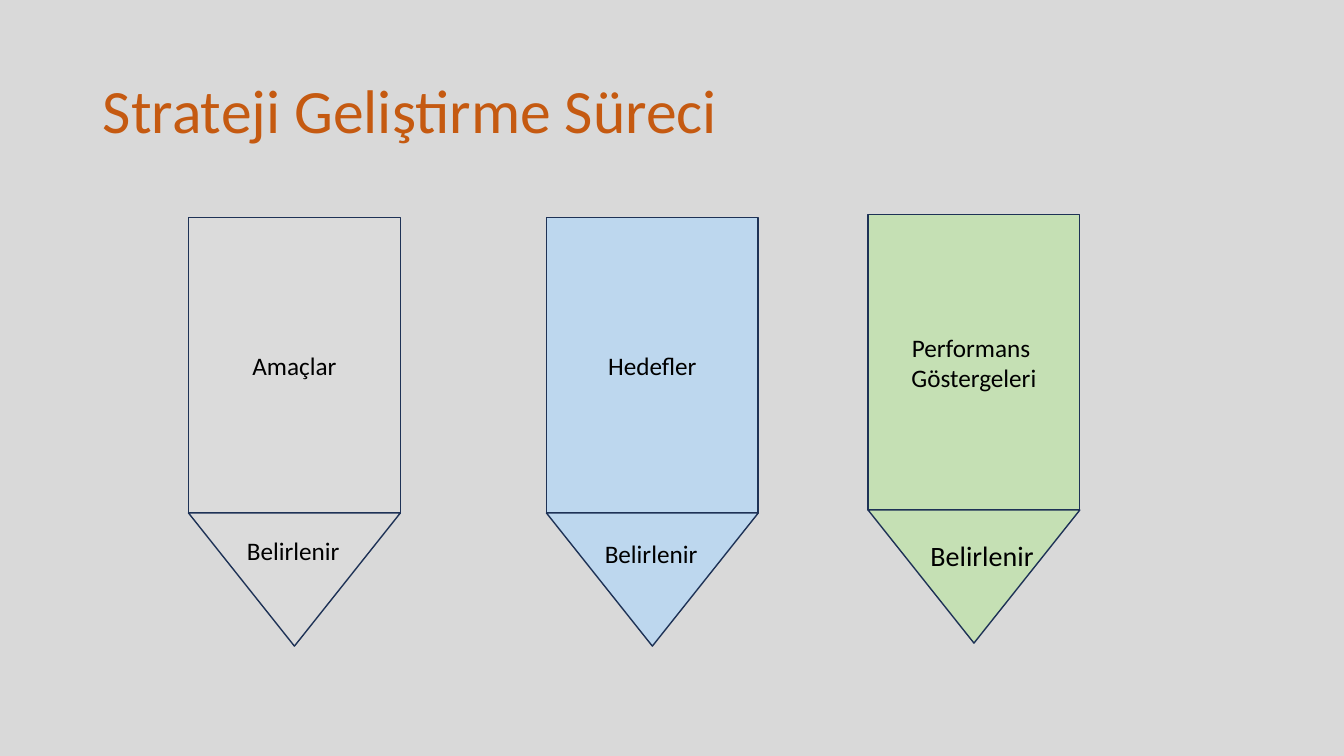
from dataclasses import dataclass

from pptx import Presentation
from pptx.dml.color import RGBColor
from pptx.enum.shapes import MSO_SHAPE
from pptx.enum.text import MSO_ANCHOR, MSO_AUTO_SIZE, PP_ALIGN
from pptx.util import Inches, Pt

RECT = MSO_SHAPE.RECTANGLE
TRIANGLE = MSO_SHAPE.ISOSCELES_TRIANGLE
MIDDLE, TOP = MSO_ANCHOR.MIDDLE, MSO_ANCHOR.TOP
LEFT, CENTER = PP_ALIGN.LEFT, PP_ALIGN.CENTER
NO_FIT, GROW = MSO_AUTO_SIZE.NONE, MSO_AUTO_SIZE.SHAPE_TO_FIT_TEXT


@dataclass(frozen=True)
class Theme:
    font: str = "Calibri"
    background: str = "D9D9D9"
    title: str = "C55A11"
    text: str = "000000"
    outline: str = "1E3256"
    gray: str = "DBDBDB"
    blue: str = "BDD7EE"
    green: str = "C5E0B4"
    title_size: int = 44
    body_size: int = 18
    large_size: int = 20
    line_width: int = 1


class SlideBuilder:
    """Draws styled elements on the current slide."""

    def __init__(self, prs, theme):
        self.theme = theme
        self.s = prs.slides.add_slide(prs.slide_layouts[5])
        fill = self.s.background.fill
        fill.solid()
        fill.fore_color.rgb = RGBColor.from_string(theme.background)

    def set_text(self, tf, text, size, color, align, anchor):
        tf.text = text
        tf.word_wrap = True
        tf.vertical_anchor = anchor
        for p in tf.paragraphs:
            p.alignment = align
            for r in p.runs:
                r.font.name = self.theme.font
                r.font.size = Pt(size)
                r.font.color.rgb = RGBColor.from_string(color)

    def title(self, text, x, y, w, h):
        sp = self.s.shapes.title
        sp.left, sp.top, sp.width, sp.height = map(Inches, (x, y, w, h))
        tf = sp.text_frame
        self.set_text(tf, text, self.theme.title_size, self.theme.title, LEFT, MIDDLE)
        tf.auto_size = NO_FIT
        tf.paragraphs[0].line_spacing = 0.9

    def shape(self, kind, x, y, w, h, color):
        sp = self.s.shapes.add_shape(kind, *map(Inches, (x, y, w, h)))
        sp.shadow.inherit = False
        sp.fill.solid()
        sp.fill.fore_color.rgb = RGBColor.from_string(color)
        sp.line.color.rgb = RGBColor.from_string(self.theme.outline)
        sp.line.width = Pt(self.theme.line_width)
        return sp

    def label(self, text, x, y, w, h, size):
        sp = self.s.shapes.add_textbox(*map(Inches, (x, y, w, h)))
        self.set_text(sp.text_frame, text, size, self.theme.text, LEFT, TOP)
        sp.text_frame.auto_size = GROW

    def pencil(self, text, x, y, color):
        width, body_height, tip_height = 2.1, 2.93, 1.32
        body = self.shape(RECT, x, y, width, body_height, color)
        self.set_text(body.text_frame, text, self.theme.body_size,
                      self.theme.text, CENTER, MIDDLE)
        tip = self.shape(TRIANGLE, x, y + body_height, width, tip_height, color)
        tip.rotation = 180


def main():
    prs = Presentation()
    prs.slide_width, prs.slide_height = Inches(13.33), Inches(7.5)
    theme = Theme()
    slide = SlideBuilder(prs, theme)
    slide.title("Strateji Geliştirme Süreci", 0.92, 0.4, 11.5, 1.45)

    small, large = theme.body_size, theme.large_size
    steps = [
        ("Amaçlar", 1.87, 2.16, theme.gray, (2.35, 5.26, 1.14, 0.4, small)),
        ("Hedefler", 5.42, 2.16, theme.blue, (5.9, 5.29, 1.14, 0.4, small)),
        ("Performans \nGöstergeleri", 8.61, 2.13, theme.green,
         (9.13, 5.29, 1.39, 0.44, large)),
    ]
    for text, x, y, color, label_box in steps:
        slide.pencil(text, x, y, color)
        slide.label("Belirlenir", *label_box)

    prs.save("out.pptx")


if __name__ == "__main__":
    main()
